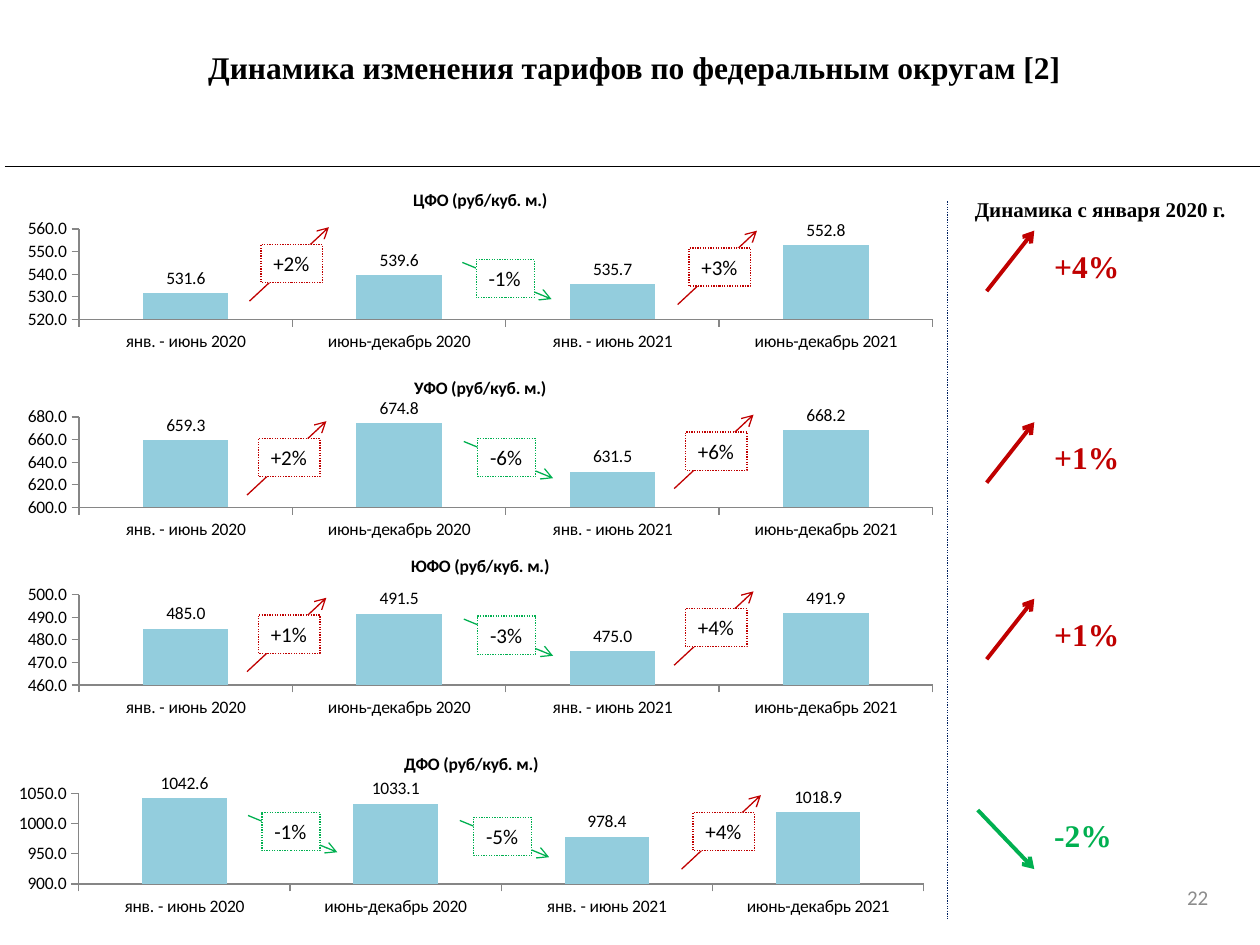
import pptx
import pptx.chart.data
import pptx.dml.color
import pptx.enum.chart
import pptx.enum.dml
import pptx.enum.shapes
import pptx.enum.text
import pptx.oxml
import pptx.oxml.ns
import pptx.util

Cm = pptx.util.Cm
Pt = pptx.util.Pt
RGBColor = pptx.dml.color.RGBColor
PP_ALIGN = pptx.enum.text.PP_ALIGN
MSO_ANCHOR = pptx.enum.text.MSO_ANCHOR
ROUND_DOT = pptx.enum.dml.MSO_LINE.ROUND_DOT

COLORS = {
    "text": "000000",
    "rise": "C00000",
    "fall": "00B050",
    "bar": "93CDDD",
    "axis": "868686",
    "divider": "002060",
    "page": "8C8C8C",
    "box": "FFFFFF",
}
SERIF = "Times New Roman"
SANS = "Calibri"
PERIODS = ["янв. - июнь 2020", "июнь-декабрь 2020", "янв. - июнь 2021", "июнь-декабрь 2021"]

# name, chart left and top, axis minimum, maximum and step, values,
# period changes with box left and top, total change with its top
DISTRICTS = [
    ("ЦФО", 0.18, 3.53, (520, 560, 10), (531.6, 539.6, 535.7, 552.8),
     [("+2%", 5.26, 4.93), ("-1%", 9.6, 5.23), ("+3%", 13.89, 5.0)], ("+4%", 4.85)),
    ("УФО", 0.18, 7.32, (600, 680, 20), (659.3, 674.8, 631.5, 668.2),
     [("+2%", 5.21, 8.84), ("-6%", 9.63, 8.84), ("+6%", 13.82, 8.71)], ("+1%", 8.71)),
    ("ЮФО", 0.18, 10.9, (460, 500, 10), (485.0, 491.5, 475.0, 491.9),
     [("+1%", 5.21, 12.4), ("-3%", 9.63, 12.42), ("+4%", 13.82, 12.27)], ("+1%", 12.27)),
    ("ДФО", 0, 14.91, (900, 1050, 50), (1042.6, 1033.1, 978.4, 1018.9),
     [("-1%", 5.28, 16.38), ("-5%", 9.55, 16.48), ("+4%", 13.97, 16.38)], ("-2%", 16.33)),
]
TRENDS = {
    "+": {"color": "rise", "box_width": 1.24, "arrow": (-0.23, 1.14, 1.37, -0.35),
          "total_arrow": (19.89, 1.02, 20.85, -0.2)},
    "-": {"color": "fall", "box_width": 1.17, "arrow": (-0.28, 0.06, 1.52, 0.8),
          "total_arrow": (19.71, 0, 20.85, 1.19)},
}

presentation = pptx.Presentation()
presentation.slide_width = Cm(25.4)
presentation.slide_height = Cm(19.05)
slide = presentation.slides.add_slide(presentation.slide_layouts[5])
shapes = slide.shapes


def draw_line(x1, y1, x2, y2, color, width, dash=None, arrow=False):
    connector = shapes.add_connector(
        pptx.enum.shapes.MSO_CONNECTOR.STRAIGHT, Cm(x1), Cm(y1), Cm(x2), Cm(y2))
    connector.line.color.rgb = RGBColor.from_string(COLORS[color])
    connector.line.width = Pt(width)
    if dash:
        connector.line.dash_style = dash
    properties = connector._element.spPr
    if arrow:
        outline = properties.find(pptx.oxml.ns.qn("a:ln"))
        outline.append(pptx.oxml.parse_xml(
            f'<a:tailEnd {pptx.oxml.ns.nsdecls("a")} type="arrow"/>'))
    properties.append(pptx.oxml.parse_xml(f'<a:effectLst {pptx.oxml.ns.nsdecls("a")}/>'))


def write_text(shape, text, font_name, size, color, bold=False,
               alignment=PP_ALIGN.LEFT, anchor=MSO_ANCHOR.TOP, wrap=True):
    text_frame = shape.text_frame
    text_frame.text = text
    text_frame.word_wrap = wrap
    text_frame.auto_size = pptx.enum.text.MSO_AUTO_SIZE.NONE
    text_frame.vertical_anchor = anchor
    paragraph = text_frame.paragraphs[0]
    paragraph.alignment = alignment
    font = paragraph.runs[0].font
    font.name = font_name
    font.size = Pt(size)
    font.bold = bold
    font.color.rgb = RGBColor.from_string(COLORS[color])


title = shapes.title
title.left, title.top, title.width, title.height = Cm(0.89), Cm(0.84), Cm(23.8), Cm(1.02)
write_text(title, "Динамика изменения тарифов по федеральным округам [2]", SERIF, 18, "text",
           bold=True, alignment=PP_ALIGN.CENTER, anchor=MSO_ANCHOR.MIDDLE)
draw_line(0.1, 3.35, 25.5, 3.35, "text", 0.75)
draw_line(19.1, 4.06, 19.1, 18.52, "divider", 0.75, dash=ROUND_DOT)

for name, left, top, scale, values, changes, total in DISTRICTS:
    chart_data = pptx.chart.data.CategoryChartData(number_format="0.0")
    chart_data.categories = PERIODS
    chart_data.add_series("Series 1", values)
    chart = shapes.add_chart(
        pptx.enum.chart.XL_CHART_TYPE.COLUMN_CLUSTERED,
        Cm(left), Cm(top), Cm(19), Cm(3.63), chart_data).chart
    chart.has_legend = False
    chart.font.name = SANS
    chart.font.size = Pt(10)
    chart.font.color.rgb = RGBColor.from_string(COLORS["text"])
    chart.has_title = True
    chart.chart_title.include_in_layout = False
    chart.chart_title.text_frame.text = f"{name} (руб/куб. м.)"
    title_font = chart.chart_title.text_frame.paragraphs[0].runs[0].font
    title_font.name = SANS
    title_font.size = Pt(10)
    title_font.bold = True

    for axis in (chart.category_axis, chart.value_axis):
        axis.has_major_gridlines = False
        axis.major_tick_mark = pptx.enum.chart.XL_TICK_MARK.OUTSIDE
        axis.minor_tick_mark = pptx.enum.chart.XL_TICK_MARK.NONE
        axis.format.line.color.rgb = RGBColor.from_string(COLORS["axis"])
        axis.tick_labels.font.size = Pt(10)
    value_axis = chart.value_axis
    value_axis.minimum_scale, value_axis.maximum_scale, value_axis.major_unit = scale
    value_axis.tick_labels.number_format = "0.0"
    value_axis.tick_labels.number_format_is_linked = False

    plot = chart.plots[0]
    plot.gap_width = 150
    plot.vary_by_categories = False
    plot.has_data_labels = True
    labels = plot.data_labels
    labels.show_value = True
    labels.number_format = "0.0"
    labels.number_format_is_linked = False
    labels.position = pptx.enum.chart.XL_LABEL_POSITION.OUTSIDE_END
    labels.font.size = Pt(10)
    fill = plot.series[0].format.fill
    fill.solid()
    fill.fore_color.rgb = RGBColor.from_string(COLORS["bar"])

    for change, x, y in changes:
        trend = TRENDS[change[0]]
        x1, y1, x2, y2 = trend["arrow"]
        draw_line(x + x1, y + y1, x + x2, y + y2, trend["color"], 0.75, arrow=True)
        box = shapes.add_shape(pptx.enum.shapes.MSO_SHAPE.RECTANGLE,
                               Cm(x), Cm(y), Cm(trend["box_width"]), Cm(0.77))
        box.shadow.inherit = False
        box.fill.solid()
        box.fill.fore_color.rgb = RGBColor.from_string(COLORS["box"])
        box.line.color.rgb = RGBColor.from_string(COLORS[trend["color"]])
        box.line.width = Pt(0.75)
        box.line.dash_style = ROUND_DOT
        write_text(box, change, SANS, 12, "text", wrap=False)

    change, y = total
    trend = TRENDS[change[0]]
    x1, y1, x2, y2 = trend["total_arrow"]
    draw_line(x1, y + y1, x2, y + y2, trend["color"], 2.25, arrow=True)
    total_box = shapes.add_textbox(Cm(21), Cm(y), Cm(1.83), Cm(1.02))
    write_text(total_box, change, SERIF, 18, trend["color"], bold=True, wrap=False)

heading = shapes.add_textbox(Cm(19.18), Cm(3.84), Cm(6), Cm(0.77))
write_text(heading, "Динамика с января 2020 г.", SERIF, 12, "text",
           bold=True, alignment=PP_ALIGN.CENTER)
page_number = shapes.add_textbox(Cm(18.69), Cm(17.58), Cm(5.92), Cm(1.02))
write_text(page_number, "22", SANS, 12, "page",
           alignment=PP_ALIGN.RIGHT, anchor=MSO_ANCHOR.MIDDLE)

presentation.save("out.pptx")
